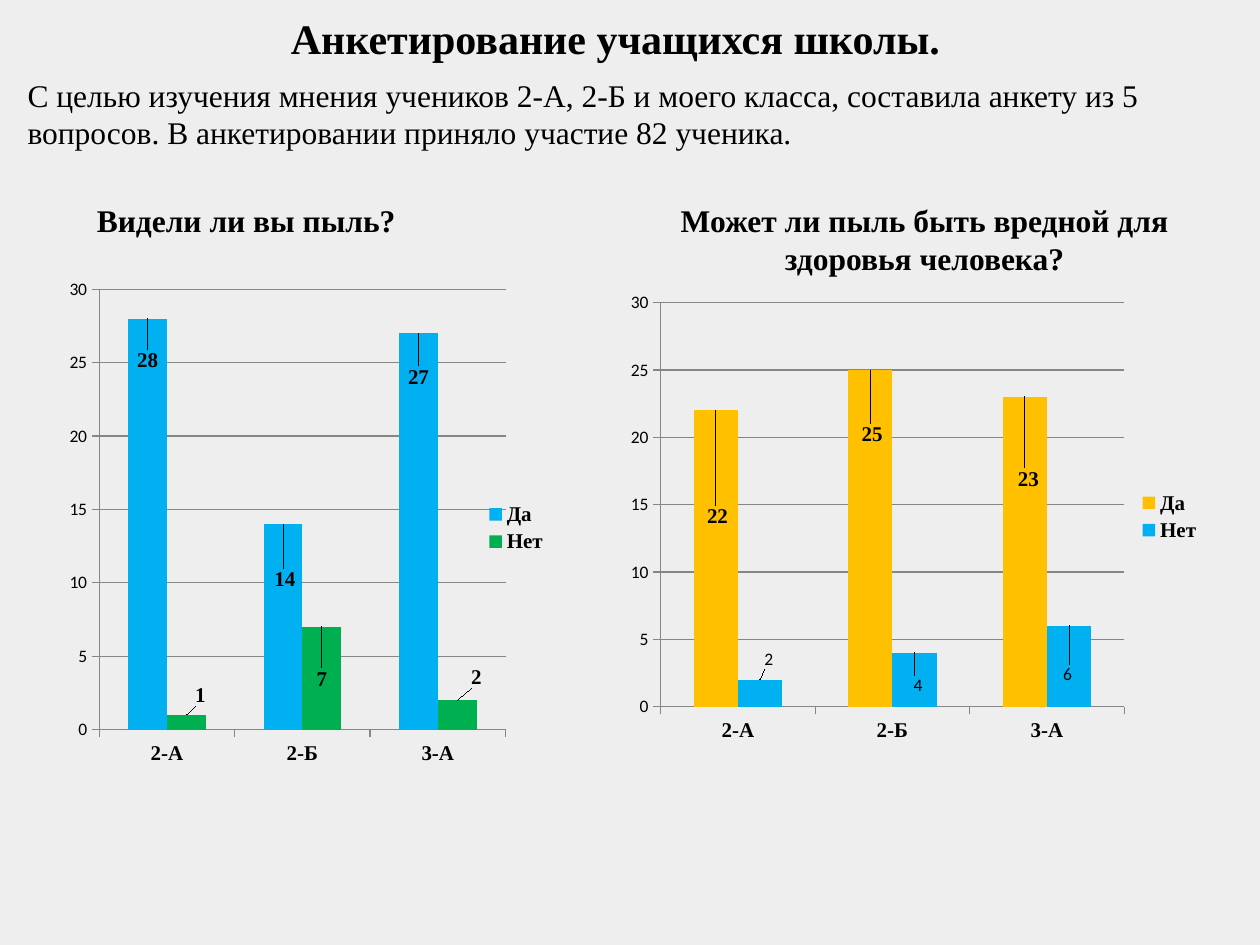
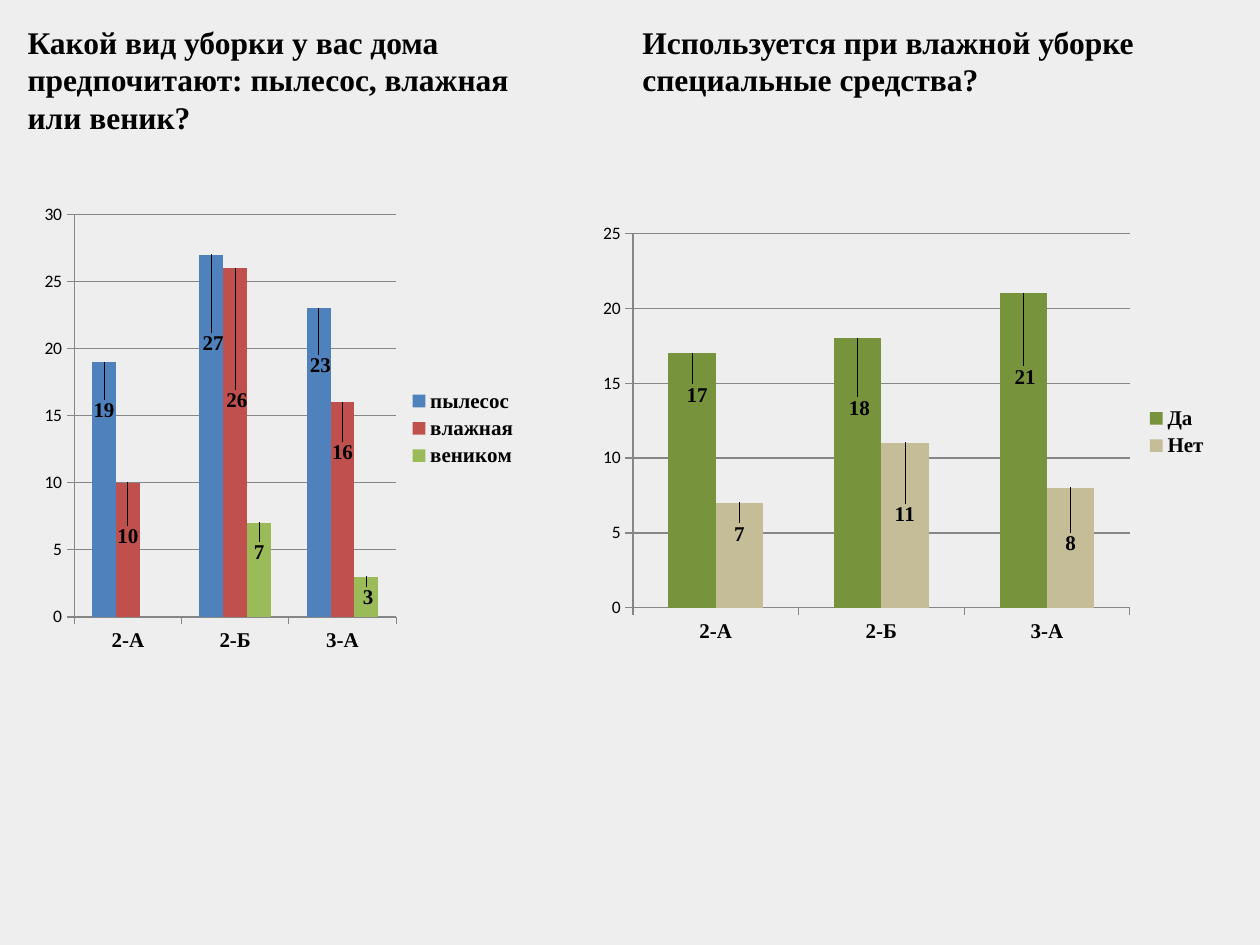
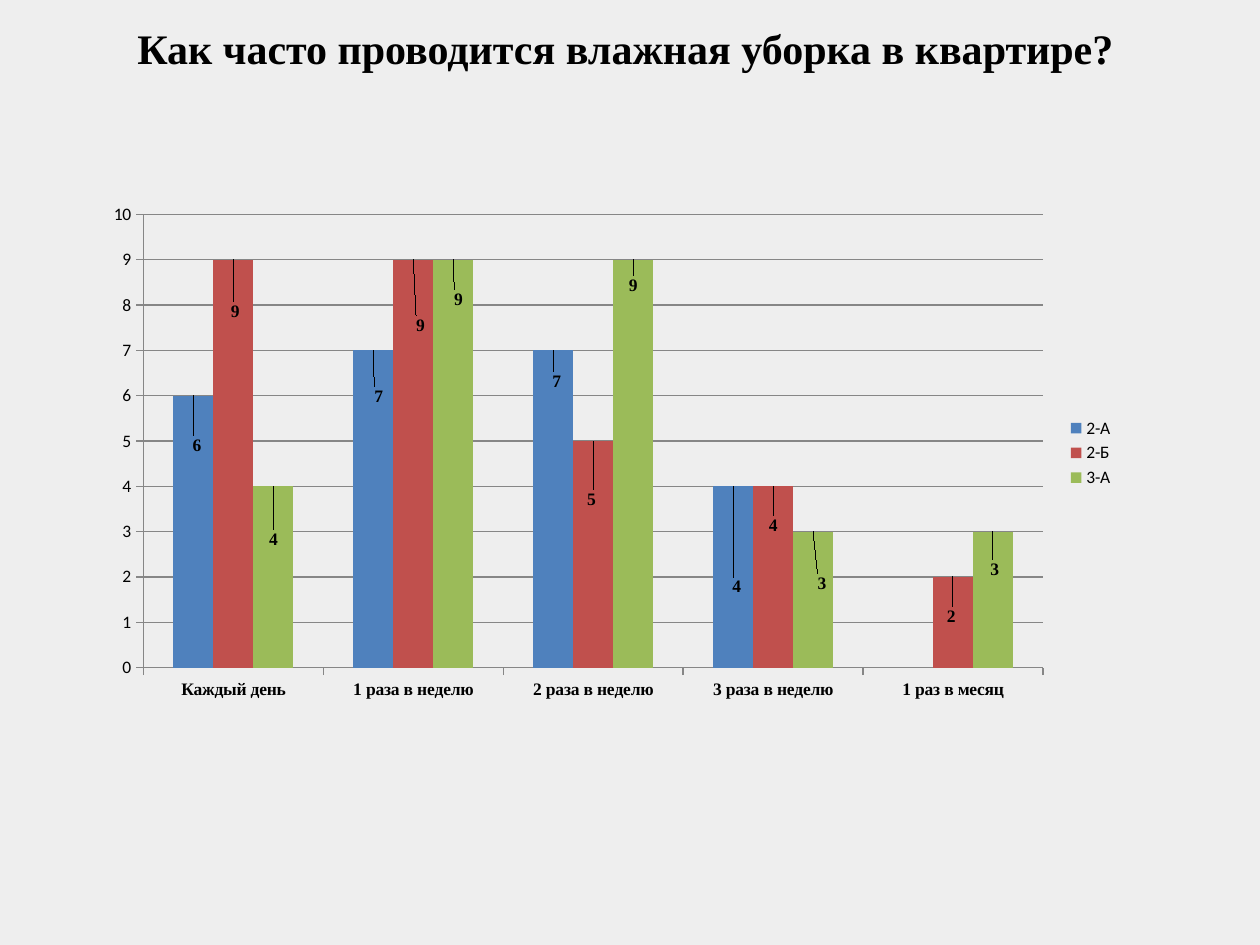
from dataclasses import dataclass
from typing import NamedTuple, Optional

from lxml.etree import SubElement
from pptx import Presentation
from pptx.chart.chart import Chart
from pptx.chart.data import CategoryChartData
from pptx.dml.color import RGBColor
from pptx.enum.chart import XL_CHART_TYPE, XL_LEGEND_POSITION, XL_TICK_MARK
from pptx.enum.text import MSO_ANCHOR, MSO_AUTO_SIZE, PP_ALIGN
from pptx.oxml import parse_xml
from pptx.oxml.ns import nsdecls, qn
from pptx.slide import Slide
from pptx.text.text import Font
from pptx.util import Pt

# Colours
PAPER = RGBColor(0xEE, 0xEE, 0xEE)
BLACK = RGBColor(0x00, 0x00, 0x00)
GRID = RGBColor(0x86, 0x86, 0x86)
SKY = RGBColor(0x00, 0xB0, 0xF0)
GREEN = RGBColor(0x00, 0xB0, 0x50)
GOLD = RGBColor(0xFF, 0xC0, 0x00)
BLUE = RGBColor(0x4F, 0x81, 0xBD)
RED = RGBColor(0xC0, 0x50, 0x4D)
LIME = RGBColor(0x9B, 0xBB, 0x59)
OLIVE = RGBColor(0x77, 0x93, 0x3C)
SAND = RGBColor(0xC4, 0xBD, 0x97)


class Face(NamedTuple):
    name: str
    size: float
    bold: bool = False


TITLE = Face("Times New Roman", 24, True)
HEAD = Face("Times New Roman", 18, True)
BODY = Face("Times New Roman", 18)
LABEL = Face("Times New Roman", 12, True)
SMALL = Face("Times New Roman", 10, True)
PLAIN = Face("Calibri", 10)


class Box(NamedTuple):
    """Left, top, width and height in points."""
    left: float
    top: float
    width: float
    height: float

    def place(self) -> tuple:
        return tuple(Pt(side) for side in self)


class Bar(NamedTuple):
    """A value, and how far its label moves from the bar's end."""
    value: float
    right: float
    down: float


@dataclass
class Series:
    name: str
    color: RGBColor
    bars: list[Optional[Bar]]
    face: Face = LABEL


@dataclass
class Graph:
    box: Box
    plot: Box  # measured from the chart's corner
    series: list[Series]
    top: int = 30
    step: int = 5
    cats: tuple = ("2-А", "2-Б", "3-А")
    axis: Face = LABEL
    legend: Face = LABEL


@dataclass
class Note:
    text: str
    box: Box
    face: Face = HEAD
    align: PP_ALIGN = PP_ALIGN.LEFT


@dataclass
class Page:
    title: Optional[Note]
    notes: list[Note]
    graphs: list[Graph]


PAGES = [
    Page(
        Note("Анкетирование учащихся школы.", Box(8.64, 3.6, 686, 36),
             TITLE, PP_ALIGN.CENTER),
        [
            Note("С целью изучения мнения учеников 2-А, 2-Б и моего класса, "
                 "составила анкету из 5 вопросов. В анкетировании приняло "
                 "участие 82 ученика.", Box(8.64, 39.6, 686, 51), BODY),
            Note("Видели ли вы пыль?", Box(48.24, 111.4, 289, 29)),
            Note("Может ли пыль быть вредной для здоровья человека?",
                 Box(351.36, 111.4, 354, 51), align=PP_ALIGN.CENTER),
        ],
        [
            Graph(Box(20.16, 157, 300, 289.5), Box(36.6, 8.4, 232.2, 251.6), [
                Series("Да", SKY, [Bar(28, 0, 33), Bar(14, 1, 41),
                                   Bar(27, 0, 34)]),
                Series("Нет", GREEN, [Bar(1, 8, -2), Bar(7, 0, 39),
                                      Bar(2, 11, -4)]),
            ]),
            Graph(Box(353.5, 162, 340, 266.4), Box(24, 11, 265, 231), [
                Series("Да", GOLD, [Bar(22, 1, 70), Bar(25, 1, 46),
                                    Bar(23, 2, 56)]),
                Series("Нет", SKY, [Bar(2, 5, -3), Bar(4, 2, 27),
                                    Bar(6, -1, 36)], PLAIN),
            ]),
        ],
    ),
    Page(
        None,
        [
            Note("Какой вид уборки у вас дома предпочитают: пылесос, влажная "
                 "или веник?", Box(8.64, 9.36, 306, 73)),
            Note("Используется при влажной уборке специальные средства?",
                 Box(360, 9.36, 345.6, 51)),
        ],
        [
            Graph(Box(19.44, 111.6, 283.7, 266.4), Box(23, 11, 184, 230), [
                Series("пылесос", BLUE, [Bar(19, 0, 37), Bar(27, 1, 60),
                                         Bar(23, 1, 42)]),
                Series("влажная", RED, [Bar(10, 0, 40), Bar(26, 1, 85),
                                        Bar(16, 0, 38)]),
                Series("веником", LIME, [None, Bar(7, 0, 26), Bar(3, 1, 21)]),
            ]),
            Graph(Box(337.7, 122.4, 360, 249), Box(24, 11, 284, 214), [
                Series("Да", OLIVE, [Bar(17, 3, 33), Bar(18, 1, 49),
                                     Bar(21, 1, 57)]),
                Series("Нет", SAND, [Bar(7, 0, 27), Bar(11, 0, 50),
                                     Bar(8, 0, 41)]),
            ], top=25),
        ],
    ),
    Page(
        Note("Как часто проводится влажная уборка в квартире?",
             Box(14.4, 9.36, 686, 36), TITLE, PP_ALIGN.CENTER),
        [],
        [
            Graph(
                Box(54, 111.6, 589.7, 294.5), Box(28, 11, 514, 259), [
                    Series("2-А", BLUE, [
                        Bar(6, 2, 37), Bar(7, 3, 35), Bar(7, 2, 26),
                        Bar(4, 2, 66), None], SMALL),
                    Series("2-Б", RED, [
                        Bar(9, 1, 38), Bar(9, 4, 46), Bar(5, -1, 42),
                        Bar(4, 0, 31), Bar(2, -1, 31)], SMALL),
                    Series("3-А", LIME, [
                        Bar(4, 0, 39), Bar(9, 3, 31), Bar(9, 0, 23),
                        Bar(3, 5, 38), Bar(3, 1, 30)], SMALL),
                ],
                top=10, step=1,
                cats=("Каждый день", "1 раза в неделю", "2 раза в неделю",
                      "3 раза в неделю", "1 раз в месяц"),
                axis=SMALL, legend=PLAIN),
        ],
    ),
]


def style(font: Font, face: Face) -> None:
    font.name, font.size, font.bold = face.name, Pt(face.size), face.bold
    font.color.rgb = BLACK


def write(shape, note: Note) -> None:
    shape.left, shape.top, shape.width, shape.height = note.box.place()
    frame = shape.text_frame
    frame.word_wrap = True
    frame.auto_size = MSO_AUTO_SIZE.SHAPE_TO_FIT_TEXT
    frame.vertical_anchor = MSO_ANCHOR.TOP
    para = frame.paragraphs[0]
    para.alignment = note.align
    run = para.add_run()
    run.text = note.text
    style(run.font, note.face)


def layout(**parts):
    """Make a manual chart layout from its named parts."""
    root = parse_xml(f"<c:layout {nsdecls('c')}/>")
    manual = SubElement(root, qn("c:manualLayout"))
    for name, value in parts.items():
        SubElement(manual, qn(f"c:{name}")).set("val", str(value))
    return root


def arrange(chart: Chart, graph: Graph) -> None:
    """Fix the plot's place and move the value labels."""
    box, plot = graph.box, graph.plot
    area = chart.element.xpath(".//c:plotArea")[0]
    for old in area.findall(qn("c:layout")):
        area.remove(old)
    area.insert(0, layout(
        layoutTarget="inner", xMode="edge", yMode="edge",
        x=plot.left / box.width, y=plot.top / box.height,
        w=plot.width / box.width, h=plot.height / box.height))
    bars = [bar for item in graph.series for bar in item.bars if bar]
    for label, bar in zip(chart.element.xpath(".//c:dLbl"), bars):
        label.insert(1, layout(x=bar.right / box.width,
                               y=bar.down / box.height))


def draw(slide: Slide, graph: Graph) -> None:
    data = CategoryChartData()
    data.categories = graph.cats
    for item in graph.series:
        data.add_series(item.name, [bar and bar.value for bar in item.bars])
    chart = slide.shapes.add_chart(
        XL_CHART_TYPE.COLUMN_CLUSTERED, *graph.box.place(), data).chart
    chart.has_title = False
    style(chart.font, PLAIN)

    # Legend
    chart.has_legend = True
    chart.legend.position = XL_LEGEND_POSITION.RIGHT
    chart.legend.include_in_layout = False
    style(chart.legend.font, graph.legend)

    # Axes
    scale = chart.value_axis
    scale.minimum_scale, scale.maximum_scale = 0, graph.top
    scale.major_unit = graph.step
    scale.has_major_gridlines = True
    style(scale.tick_labels.font, PLAIN)
    style(chart.category_axis.tick_labels.font, graph.axis)
    for axis in (scale, chart.category_axis):
        axis.major_tick_mark = XL_TICK_MARK.OUTSIDE
        axis.minor_tick_mark = XL_TICK_MARK.NONE
    for part in (scale, chart.category_axis, scale.major_gridlines):
        part.format.line.color.rgb = GRID
        part.format.line.width = Pt(0.75)

    # Columns and their labels
    group = chart.plots[0]
    group.gap_width, group.overlap = 150, 0
    group.vary_by_categories = False
    for series, item in zip(group.series, graph.series):
        series.format.fill.solid()
        series.format.fill.fore_color.rgb = item.color
        series.invert_if_negative = False
        series.data_labels.show_value = True
        style(series.data_labels.font, item.face)
        for spot, bar in enumerate(item.bars):
            if bar:
                style(series.points[spot].data_label.font, item.face)
    arrange(chart, graph)


def main() -> None:
    deck = Presentation()
    deck.slide_width, deck.slide_height = Pt(720), Pt(540)
    back = deck.slide_master.background.fill
    back.solid()
    back.fore_color.rgb = PAPER
    titled = deck.slide_layouts.get_by_name("Title Only")
    blank = deck.slide_layouts.get_by_name("Blank")
    for page in PAGES:
        slide = deck.slides.add_slide(titled if page.title else blank)
        if page.title:
            write(slide.shapes.title, page.title)
        for note in page.notes:
            write(slide.shapes.add_textbox(*note.box.place()), note)
        for graph in page.graphs:
            draw(slide, graph)
    deck.save("out.pptx")


if __name__ == "__main__":
    main()
